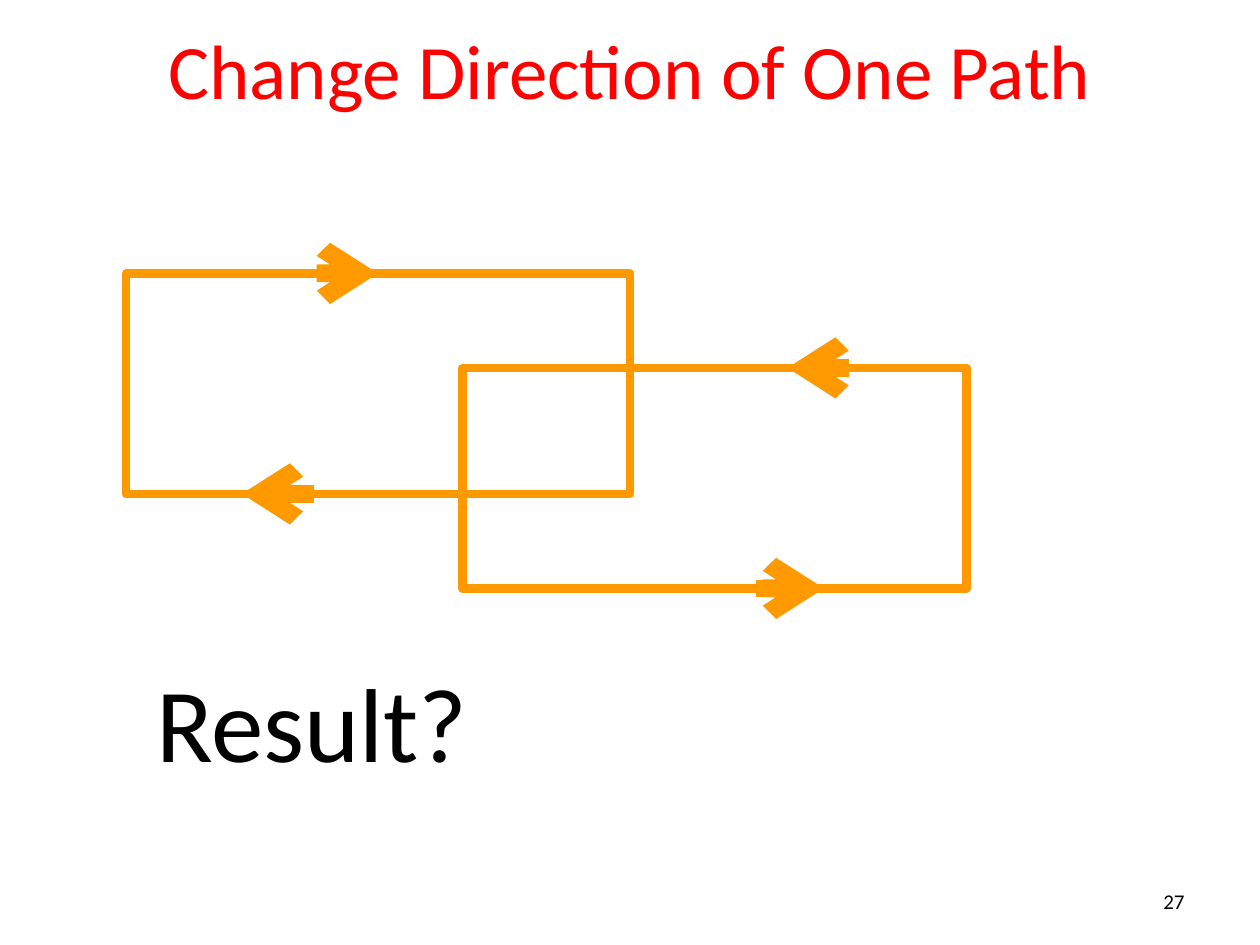
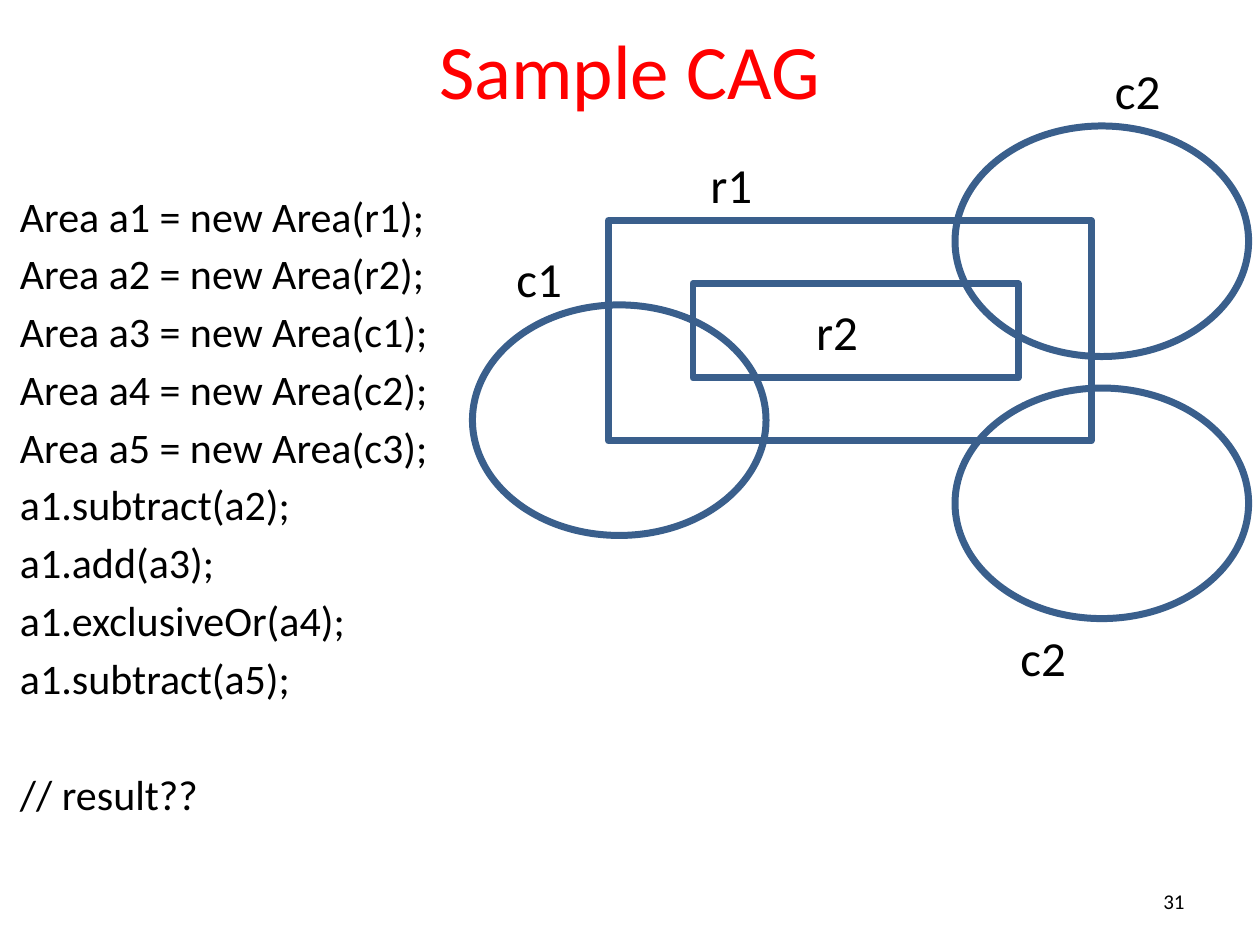
"""Build two slides on path direction and constructive area geometry."""
from dataclasses import dataclass

from lxml import etree
from pptx import Presentation, util as u
from pptx.dml.color import RGBColor
from pptx.enum import shapes, text
from pptx.oxml import ns

COLOURS = {"title": "FF0000", "body": "000000", "path": "FF9900", "area": "3A5F8C"}
FONT = "Calibri"
RECT, OVAL = shapes.MSO_SHAPE.RECTANGLE, shapes.MSO_SHAPE.OVAL
LEFT, CENTER, RIGHT = text.PP_ALIGN.LEFT, text.PP_ALIGN.CENTER, text.PP_ALIGN.RIGHT
TOP, MIDDLE = text.MSO_ANCHOR.TOP, text.MSO_ANCHOR.MIDDLE
LINE_GAP, BLOCK_GAP = 4.2, 37.7


@dataclass(frozen=True)
class Outline:
    kind: shapes.MSO_SHAPE
    left: float
    top: float
    width: float
    height: float
    colour: str
    weight: float


@dataclass(frozen=True)
class Direction:
    start: float
    end: float
    y: float


@dataclass(frozen=True)
class Caption:
    words: str
    left: float
    top: float
    width: float
    height: float
    size: float
    colour: str = "body"
    align: text.PP_ALIGN = LEFT
    anchor: text.MSO_ANCHOR = TOP
    wrap: bool = False


def path_box(left: float, top: float) -> Outline:
    return Outline(RECT, left, top, 4, 1.75, "path", 5)


def area_rect(left: float, top: float, width: float, height: float) -> Outline:
    return Outline(RECT, left, top, width, height, "area", 4)


def area_circle(left: float, top: float) -> Outline:
    return Outline(OVAL, left, top, 2.33, 1.83, "area", 4)


def area_label(words: str, left: float, top: float) -> Caption:
    return Caption(words, left, top, 0.57 if words[0] == "c" else 0.54, 0.57, 28)


PATHS = [path_box(3.67, 2.92), path_box(1, 2.17)]
DIRECTIONS = [
    Direction(2.67, 3, 2.17),
    Direction(6.58, 6.25, 2.92),
    Direction(2.49, 1.92, 3.92),
    Direction(6, 6.54, 4.67),
]
QUESTION = Caption("Result?", 1.14, 5.17, 2.7, 1.11, 60)
AREAS = [
    area_rect(4.83, 1.75, 3.83, 1.75),
    area_rect(5.5, 2.25, 2.58, 0.75),
    area_circle(7.58, 1),
    area_circle(3.75, 2.42),
    area_circle(7.58, 3.08),
]
AREA_LABELS = [
    area_label("r2", 6.38, 2.34),
    area_label("r1", 5.54, 1.18),
    area_label("c1", 4, 1.92),
    area_label("c2", 8.75, 0.43),
    area_label("c2", 8, 4.93),
]
CODE = """Area a1 = new Area(r1);
Area a2 = new Area(r2);
Area a3 = new Area(c1);
Area a4 = new Area(c2);
Area a5 = new Area(c3);
a1.subtract(a2);
a1.add(a3);
a1.exclusiveOr(a4);
a1.subtract(a5);
// result??"""


def rgb(name: str) -> RGBColor:
    return RGBColor.from_string(COLOURS[name])


def draw_outline(slide, outline: Outline) -> None:
    bounds = (outline.left, outline.top, outline.width, outline.height)
    figure = slide.shapes.add_shape(outline.kind, *map(u.Inches, bounds))
    figure.shadow.inherit = False
    figure.fill.background()
    figure.line.color.rgb = rgb(outline.colour)
    figure.line.width = u.Pt(outline.weight)


def draw_direction(slide, direction: Direction) -> None:
    ends = (direction.start, direction.y, direction.end, direction.y)
    arrow = slide.shapes.add_connector(shapes.MSO_CONNECTOR.STRAIGHT, *map(u.Inches, ends))
    arrow.line.color.rgb = rgb("path")
    arrow.line.width = u.Pt(10)
    etree.SubElement(arrow.line._get_or_add_ln(), ns.qn("a:tailEnd"), type="arrow")
    etree.SubElement(arrow._element.spPr, ns.qn("a:effectLst"))


def draw_caption(slide, caption: Caption):
    bounds = (caption.left, caption.top, caption.width, caption.height)
    frame = slide.shapes.add_textbox(*map(u.Inches, bounds)).text_frame
    frame.word_wrap = caption.wrap
    frame.vertical_anchor = caption.anchor
    frame.text = caption.words
    for paragraph in frame.paragraphs:
        paragraph.alignment = caption.align
        paragraph.font.name = FONT
        paragraph.font.size = u.Pt(caption.size)
        paragraph.font.color.rgb = rgb(caption.colour)
    return frame


def start_slide(deck, title: str, number: int):
    slide = deck.slides.add_slide(deck.slide_layouts[6])
    draw_caption(slide, Caption(title, 0.5, -0.08, 9, 1.25, 44, "title", CENTER, MIDDLE, True))
    draw_caption(
        slide, Caption(str(number), 7.17, 6.95, 2.33, 0.4, 12, "body", RIGHT, MIDDLE, True)
    )
    return slide


def build_direction_slide(deck) -> None:
    slide = start_slide(deck, "Change Direction of One Path", 27)
    for path_outline in PATHS:
        draw_outline(slide, path_outline)
    for direction in DIRECTIONS:
        draw_direction(slide, direction)
    draw_caption(slide, QUESTION)


def build_area_slide(deck) -> None:
    slide = start_slide(deck, "Sample CAG", 31)
    for area in AREAS:
        draw_outline(slide, area)
    for label in AREA_LABELS:
        draw_caption(slide, label)
    code = draw_caption(slide, Caption(CODE, 0.06, 1.46, 4.75, 5.35, 24, wrap=True))
    for statement in code.paragraphs:
        statement.space_before = u.Pt(LINE_GAP)
    code.paragraphs[-1].space_before = u.Pt(BLOCK_GAP)


def main() -> None:
    deck = Presentation()
    deck.slide_width, deck.slide_height = u.Inches(10), u.Inches(7.5)
    build_direction_slide(deck)
    build_area_slide(deck)
    deck.save("out.pptx")


if __name__ == "__main__":
    main()
